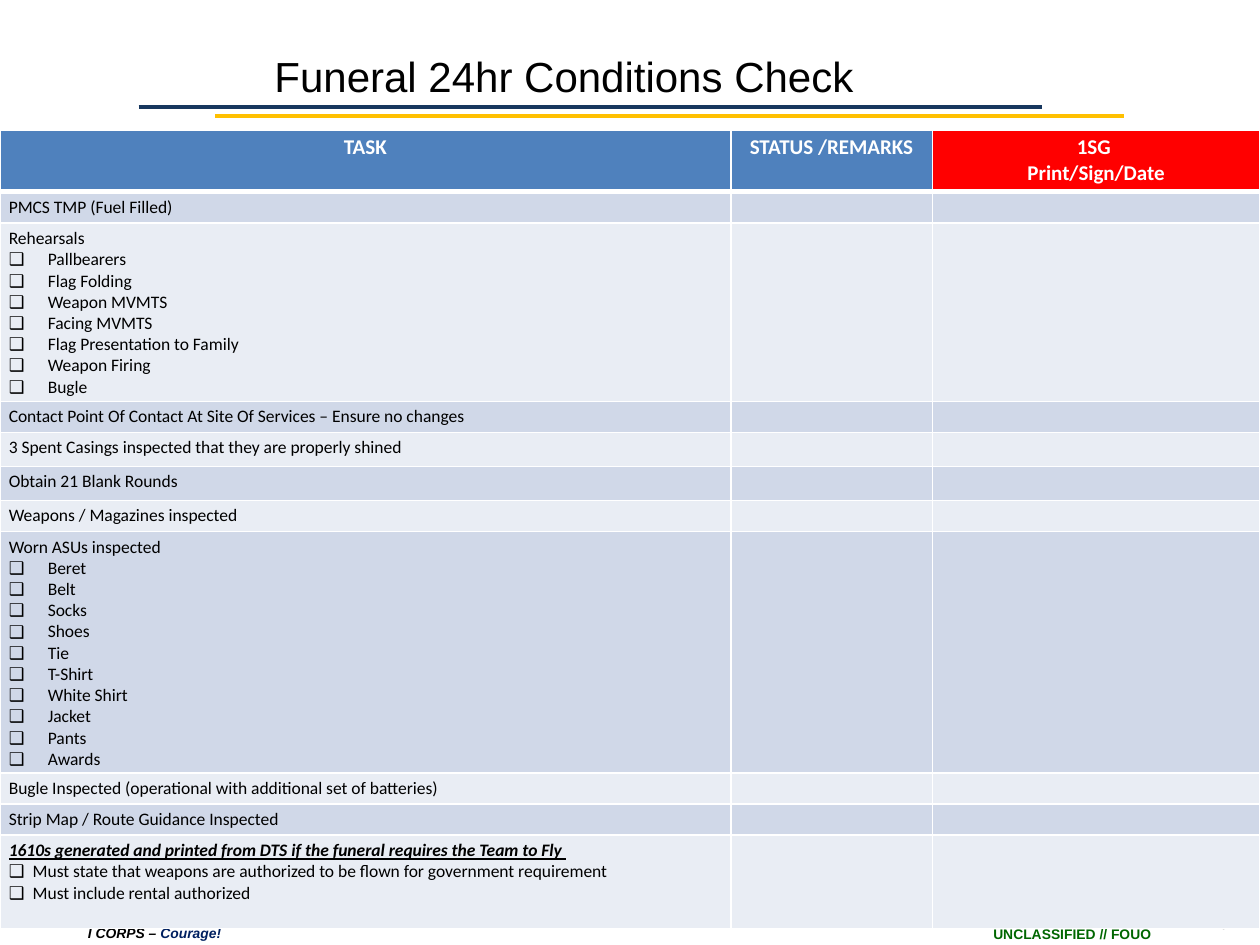
import pptx
import pptx.dml.color
import pptx.enum.shapes
import pptx.enum.text
import pptx.oxml.ns
import pptx.util
from lxml import etree

Inches = pptx.util.Inches
Pt = pptx.util.Pt
qn = pptx.oxml.ns.qn
Align = pptx.enum.text.PP_ALIGN
Anchor = pptx.enum.text.MSO_ANCHOR

NAVY, GOLD, HEADER_BLUE, RED = "17375E", "FFC000", "4F81BD", "FF0000"
BAND_FILLS = ("D0D8E8", "E9EDF4")
HEADER_FORMAT = {"size": Pt(12), "name": "Calibri", "color": "FFFFFF", "bold": True}
BODY_FORMAT = {"size": Pt(10), "name": "Calibri", "color": "000000", "bold": False}
STRESS_FORMAT = BODY_FORMAT | {"bold": True, "italic": True, "underline": True}
FOOTER_FORMAT = {"size": Pt(7.9), "name": "Arial", "color": "000000", "bold": True}
MOTTO_FORMAT = FOOTER_FORMAT | {"italic": True}

COLUMN_WIDTHS = (5.8, 1.6, 2.6)
HEADERS = (
    (("TASK",), HEADER_BLUE),
    (("STATUS /REMARKS",), HEADER_BLUE),
    (("1SG ", "Print/Sign/Date"), RED),
)
HEADER_HEIGHT = 0.49
# row height, task, checklist items, checklist indent, task format
TASKS = (
    (0.25, "PMCS TMP (Fuel Filled)", (), 0, BODY_FORMAT),
    (1.41, "Rehearsals",
     ("Pallbearers", "Flag Folding", "Weapon MVMTS", "Facing MVMTS",
      "Flag Presentation to Family", "Weapon Firing", "Bugle"), 0.31, BODY_FORMAT),
    (0.24, "Contact Point Of Contact At Site Of Services – Ensure no changes", (), 0, BODY_FORMAT),
    (0.27, "3 Spent Casings inspected that they are properly shined", (), 0, BODY_FORMAT),
    (0.27, "Obtain 21 Blank Rounds", (), 0, BODY_FORMAT),
    (0.24, "Weapons / Magazines inspected", (), 0, BODY_FORMAT),
    (1.91, "Worn ASUs inspected",
     ("Beret", "Belt", "Socks", "Shoes", "Tie", "T-Shirt", "White Shirt",
      "Jacket", "Pants", "Awards"), 0.31, BODY_FORMAT),
    (0.24, "Bugle Inspected (operational with additional set of batteries)", (), 0, BODY_FORMAT),
    (0.24, "Strip Map / Route Guidance Inspected", (), 0, BODY_FORMAT),
    (0.74, "1610s generated and printed from DTS if the funeral requires the Team to Fly ",
     ("Must state that weapons are authorized to be flown for government requirement",
      "Must include rental authorized"), 0.19, STRESS_FORMAT),
)


def rgb(value):
    return pptx.dml.color.RGBColor.from_string(value)


class SlideBuilder:
    """Holds the table style and the slide being drawn."""

    border_color = "FFFFFF"
    bullet = "❑"
    cell_margins = {"margin_left": Inches(0.07), "margin_right": Inches(0.07),
                    "margin_top": Inches(0.04), "margin_bottom": Inches(0.04)}

    def __init__(self, slide):
        self.slide = slide

    def span(self, para, text, style):
        span = para.add_run()
        span.text = text
        for name, value in style.items():
            if name == "color":
                span.font.color.rgb = rgb(value)
            else:
                setattr(span.font, name, value)

    def line(self, left, top, right, color):
        line = self.slide.shapes.add_connector(
            pptx.enum.shapes.MSO_CONNECTOR.STRAIGHT,
            Inches(left), Inches(top), Inches(right), Inches(top))
        line.line.color.rgb = rgb(color)
        line.line.width = Pt(2.25)
        etree.SubElement(line._element.spPr, qn("a:effectLst"))

    def text(self, left, top, width, height, spans, align=Align.LEFT, **frame_format):
        box = self.slide.shapes.add_textbox(
            Inches(left), Inches(top), Inches(width), Inches(height))
        frame = box.text_frame
        for name, value in ({"word_wrap": True} | frame_format).items():
            setattr(frame, name, value)
        para = frame.paragraphs[0]
        para.alignment = align
        for text, style in spans:
            self.span(para, text, style)

    def bullet_para(self, para, indent):
        properties = para._p.get_or_add_pPr()
        properties.set("marL", str(Inches(indent)))
        properties.set("indent", str(-Inches(indent)))
        etree.SubElement(properties, qn("a:buFont"), typeface="Wingdings 2")
        properties[-1].set("typeface", "Arial")
        etree.SubElement(properties, qn("a:buChar"), char=self.bullet)

    def border(self, cell, bottom_width):
        properties = cell._tc.get_or_add_tcPr()
        widths = {"lnL": 1, "lnR": 1, "lnT": 1, "lnB": bottom_width}
        for position, (side, width) in enumerate(widths.items()):
            edge = etree.Element(qn(f"a:{side}"), w=str(Pt(width)))
            fill = etree.SubElement(edge, qn("a:solidFill"))
            etree.SubElement(fill, qn("a:srgbClr"), val=self.border_color)
            properties.insert(position, edge)

    def cell(self, cell, fill, lines=(), align=Align.LEFT, bottom_width=1):
        """Fill a cell with lines of (text, style, bullet indent)."""
        for name, value in self.cell_margins.items():
            setattr(cell, name, value)
        cell.fill.solid()
        cell.fill.fore_color.rgb = rgb(fill)
        self.border(cell, bottom_width)
        frame = cell.text_frame
        for number, (text, style, indent) in enumerate(lines):
            para = frame.add_paragraph() if number else frame.paragraphs[0]
            para.alignment = align
            if indent:
                self.bullet_para(para, indent)
            self.span(para, text, style)
        if not lines:
            # Keeps an empty cell from stretching its row
            etree.SubElement(frame.paragraphs[0]._p, qn("a:endParaRPr"), sz="1000")

    def table(self, left, top):
        heights = [HEADER_HEIGHT] + [task[0] for task in TASKS]
        table = self.slide.shapes.add_table(
            len(heights), len(COLUMN_WIDTHS), Inches(left), Inches(top),
            Inches(sum(COLUMN_WIDTHS)), Inches(sum(heights))).table
        for column, width in zip(table.columns, COLUMN_WIDTHS):
            column.width = Inches(width)
        for row, height in zip(table.rows, heights):
            row.height = Inches(height)
        for column, (labels, fill) in enumerate(HEADERS):
            lines = [(label, HEADER_FORMAT, 0) for label in labels]
            self.cell(table.cell(0, column), fill, lines, Align.CENTER, 3)
        for number, (_, task, items, indent, style) in enumerate(TASKS):
            fill = BAND_FILLS[number % 2]
            lines = [(task, style, 0)] + [(item, BODY_FORMAT, indent) for item in items]
            self.cell(table.cell(number + 1, 0), fill, lines)
            for column in range(1, len(COLUMN_WIDTHS)):
                self.cell(table.cell(number + 1, column), fill)


def main():
    deck = pptx.Presentation()
    deck.slide_width, deck.slide_height = Inches(10), Inches(7.5)
    page = SlideBuilder(deck.slides.add_slide(deck.slide_layouts[6]))

    page.line(1.1, 0.85, 8.27, NAVY)
    page.line(1.71, 0.92, 8.92, GOLD)
    page.text(7.51, 7.35, 2, 0.13,
              [("UNCLASSIFIED // FOUO", FOOTER_FORMAT | {"color": "006600"})], Align.CENTER,
              margin_top=0, margin_bottom=0, vertical_anchor=Anchor.MIDDLE)
    page.text(0.6, 7.29, 1.87, 0.24,
              [("I CORPS – ", MOTTO_FORMAT), ("Courage!", MOTTO_FORMAT | {"color": "002060"})])
    page.text(9.58, 7.2, 0.42, 0.25,
              [("8", {"size": Pt(9), "name": "Arial", "color": "000000"})])
    page.text(2.08, 0.35, 6.49, 0.5,
              [("Funeral 24hr Conditions Check",
                {"size": Pt(24), "name": "Arial", "color": "000000"})])
    page.table(0, 1.03)

    deck.save("out.pptx")


if __name__ == "__main__":
    main()
